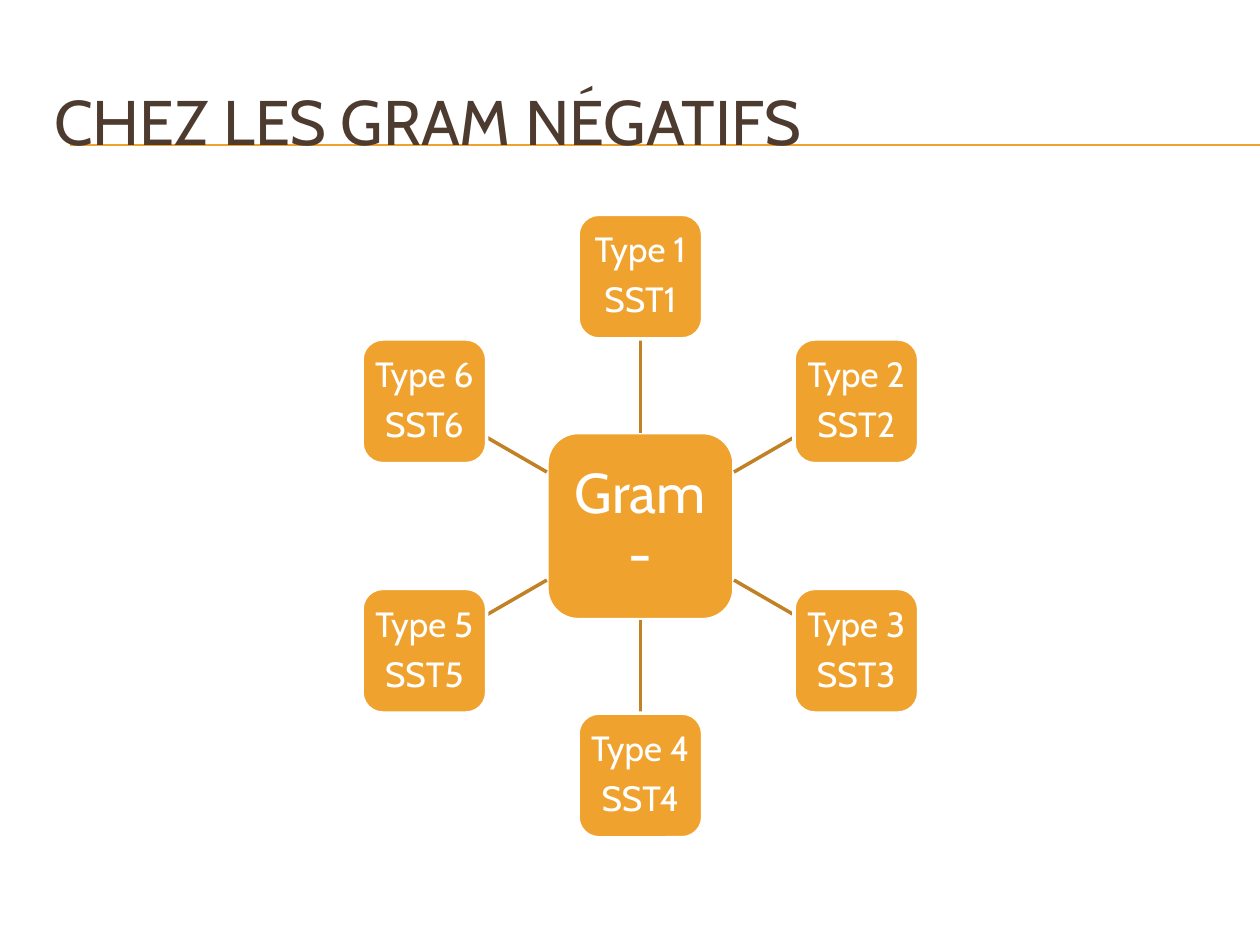
from collections import namedtuple
from dataclasses import dataclass
from math import cos, radians, sin

from lxml.etree import SubElement
from pptx import Presentation
from pptx.dml.color import RGBColor
from pptx.enum.shapes import MSO_CONNECTOR, MSO_SHAPE
from pptx.enum.text import MSO_ANCHOR, PP_ALIGN
from pptx.oxml.ns import qn
from pptx.util import Cm, Pt

Box = namedtuple("Box", "left top width height")


@dataclass(frozen=True)
class Theme:
    """Colours, font and type sizes of the slide."""
    accent: RGBColor = RGBColor(0xF0, 0xA2, 0x2E)
    spoke: RGBColor = RGBColor(0xC0, 0x82, 0x25)
    title: RGBColor = RGBColor(0x4E, 0x3B, 0x30)
    white: RGBColor = RGBColor(0xFF, 0xFF, 0xFF)
    font: str = "Cabin"
    title_size: int = 36
    hub_size: int = 32
    node_size: int = 20


THEME = Theme()


def apply(target, values):
    """Set each attribute named in values on target."""
    for name, value in values.items():
        setattr(target, name, value)


def write_lines(shape, lines, size, color, inset, paragraph_format):
    """Write one paragraph per line, centred vertically in the shape."""
    frame = shape.text_frame
    margins = ("margin_left", "margin_top", "margin_right", "margin_bottom")
    apply(frame, dict.fromkeys(margins, Cm(inset)))
    apply(frame, {"word_wrap": True, "vertical_anchor": MSO_ANCHOR.MIDDLE,
                  "text": "\n".join(lines)})
    for paragraph in frame.paragraphs:
        apply(paragraph, paragraph_format)
        apply(paragraph.font, {"name": THEME.font, "size": Pt(size)})
        paragraph.font.color.rgb = color


def add_line(slide, start, end, color, width):
    """Draw a straight line without shadow between two points in centimetres."""
    points = [Cm(value) for value in (*start, *end)]
    connector = slide.shapes.add_connector(MSO_CONNECTOR.STRAIGHT, *points)
    connector.line.color.rgb = color
    connector.line.width = Pt(width)
    SubElement(connector._element.spPr, qn("a:effectLst"))
    return connector


def add_tile(slide, center, side, lines, size, inset):
    """Draw a rounded square with centred text around a point."""
    left, top = (value - side / 2 for value in center)
    tile = slide.shapes.add_shape(MSO_SHAPE.ROUNDED_RECTANGLE,
                                  Cm(left), Cm(top), Cm(side), Cm(side))
    tile.shadow.inherit = False
    tile.fill.solid()
    tile.fill.fore_color.rgb = THEME.accent
    tile.line.color.rgb = THEME.white
    tile.line.width = Pt(2)
    write_lines(tile, lines, size, THEME.white, inset, {
        "alignment": PP_ALIGN.CENTER, "line_spacing": 0.9,
        "space_after": Pt(0.35 * size)})
    return tile


def add_title(slide, box, text):
    """Place the title over a double rule running to the right of the box."""
    rule_left, rule_right = box.left + 0.58, box.left + 24.56
    for offset in (1.67, 1.69):
        height = box.top + offset
        add_line(slide, (rule_left, height), (rule_right, height), THEME.accent, 0.75)
    title = slide.shapes.add_textbox(*(Cm(value) for value in box))
    write_lines(title, [text], THEME.title_size, THEME.title, 0.25,
                {"alignment": PP_ALIGN.LEFT})


def add_radial_diagram(slide, box, hub_text, nodes):
    """Place the hub in the middle of the box and the nodes clockwise around it."""
    hub_side, node_side = 0.3 * box.height, 0.2 * box.height
    radius = (box.height - node_side) / 2
    center = (box.left + box.width / 2, box.top + box.height / 2)
    hub = add_tile(slide, center, hub_side, [hub_text], THEME.hub_size, 0.23)
    for index, lines in enumerate(nodes):
        angle = radians(360 * index / len(nodes) - 90)
        direction = (cos(angle), sin(angle))
        reach = max(abs(value) for value in direction)

        def point(distance):
            """Return the point at a distance from the hub centre."""
            return tuple(middle + distance * step
                         for middle, step in zip(center, direction))

        spoke = add_line(slide, point(hub_side / 2 / reach),
                         point(radius - node_side / 2 / reach), THEME.spoke, 2)
        node = add_tile(slide, point(radius), node_side, lines, THEME.node_size, 0.1)
        if abs(direction[0]) < 0.01:
            hub_site, node_site = (0, 2) if direction[1] < 0 else (2, 0)
            spoke.begin_connect(hub, hub_site)
            spoke.end_connect(node, node_site)


def main():
    """Build and save the slide."""
    presentation = Presentation()
    apply(presentation, {"slide_width": Cm(25.4), "slide_height": Cm(19.05)})
    slide = presentation.slides.add_slide(presentation.slide_layouts[6])
    add_title(slide, Box(0.84, 1.25, 24.13, 2.34), "CHEZ LES GRAM NÉGATIFS")
    nodes = [(f"Type {number}", f"SST{number}") for number in range(1, 7)]
    add_radial_diagram(slide, Box(7.29, 4.32, 11.24, 12.57), "Gram-", nodes)
    presentation.save("out.pptx")


if __name__ == "__main__":
    main()
